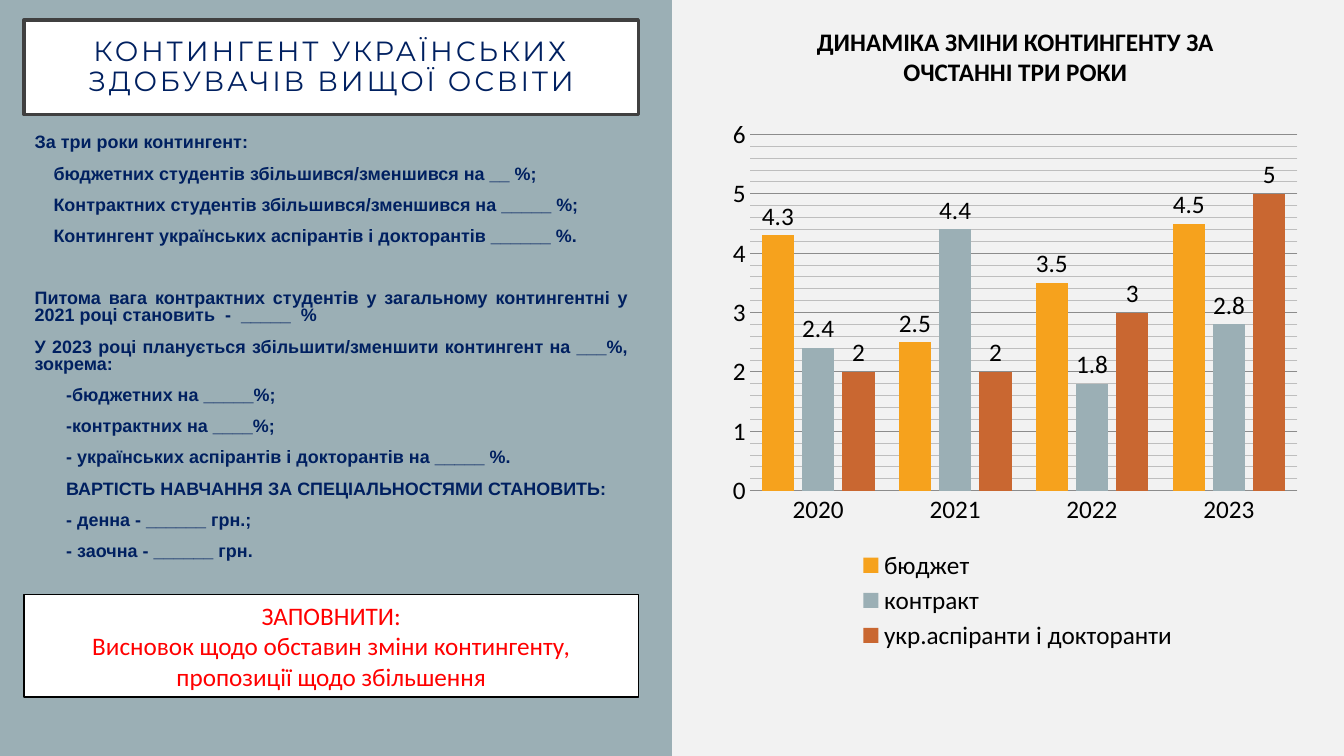
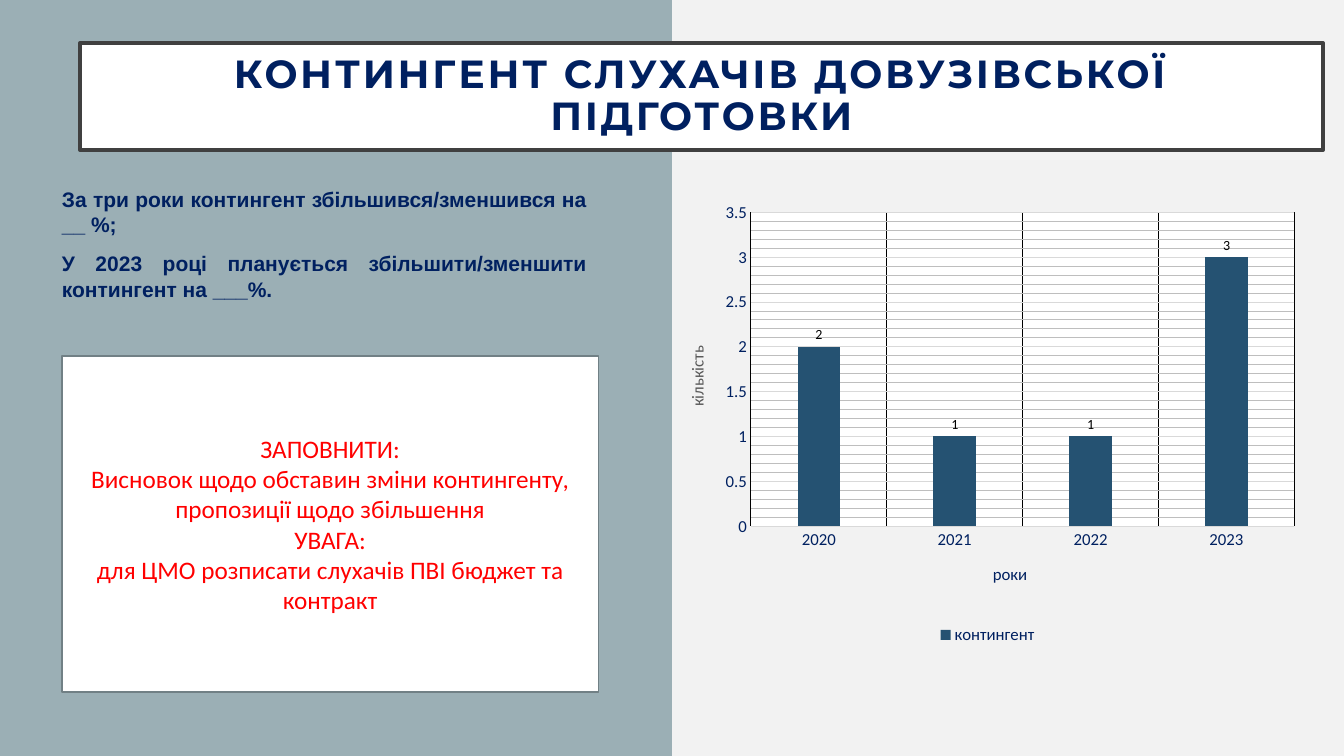
from copy import deepcopy

from lxml import etree
from pptx import Presentation
from pptx import util as u
from pptx.chart.data import CategoryChartData
from pptx.dml.color import RGBColor
from pptx.enum import chart as ch
from pptx.enum import shapes, text
from pptx.oxml import ns

PX = 9525  # EMU in one px, 96 px to the inch
WIDTH, HEIGHT = 1280, 720

NAVY = RGBColor(0x00, 0x20, 0x60)
RED = RGBColor(0xFF, 0x00, 0x00)
BLACK = RGBColor(0x00, 0x00, 0x00)
WHITE = RGBColor(0xFF, 0xFF, 0xFF)
PAPER = RGBColor(0xF2, 0xF2, 0xF2)
SLATE = RGBColor(0x9B, 0xAF, 0xB5)
FRAME = RGBColor(0x40, 0x40, 0x40)
CARD_EDGE = RGBColor(0x71, 0x80, 0x85)
CAPTION = RGBColor(0x59, 0x59, 0x59)
MAJOR_GRID = RGBColor(0x8C, 0x8C, 0x8C)
MINOR_GRID = RGBColor(0xBE, 0xBE, 0xBE)
PALE_GRID = RGBColor(0xD9, 0xD9, 0xD9)
AMBER = RGBColor(0xF6, 0xA2, 0x1D)
RUST = RGBColor(0xC9, 0x67, 0x31)
TEAL = RGBColor(0x25, 0x52, 0x72)


def add_text(slide, box, paragraphs, font, size, color, bold=False, edge=None,
             align=text.PP_ALIGN.CENTER, leading=1.0, gap=0, tracking=0, inset=10):
    """Text box, or a white framed card if edge is (colour, points).

    A paragraph is (text, left indent in px, extra points before it).
    """
    place = [v * PX for v in box]
    if edge:
        shape = slide.shapes.add_shape(shapes.MSO_SHAPE.RECTANGLE, *place)
        shape.shadow.inherit = False
        shape.fill.solid()
        shape.fill.fore_color.rgb = WHITE
        shape.line.color.rgb, shape.line.width = edge[0], u.Pt(edge[1])
    else:
        shape = slide.shapes.add_textbox(*place)
    frame = shape.text_frame
    frame.word_wrap = True
    frame.margin_left = frame.margin_right = inset * PX
    frame.vertical_anchor = text.MSO_ANCHOR.MIDDLE if edge else text.MSO_ANCHOR.TOP
    for i, (words, indent, extra) in enumerate(paragraphs):
        p = frame.paragraphs[0] if i == 0 else frame.add_paragraph()
        p.alignment, p.line_spacing = align, leading
        p.space_before = u.Pt(gap + extra)
        if indent:
            p._p.get_or_add_pPr().set("marL", str(indent * PX))
        run = p.add_run()
        run.text = words
        run.font.name, run.font.size, run.font.bold = font, u.Pt(size), bold
        run.font.color.rgb = color
        if tracking:
            run._r.get_or_add_rPr().set("spc", str(tracking * 100))


def add_columns(slide, box, series, size, axis_size, axis_color, top, step,
                minor_step, grid, base_line, gap, overlap, plot_box, legend_box=None):
    """Clustered columns; series holds (name, values, colour)."""
    data = CategoryChartData()
    data.categories = ["2020", "2021", "2022", "2023"]
    for name, values, _ in series:
        data.add_series(name, values)
    chart = slide.shapes.add_chart(ch.XL_CHART_TYPE.COLUMN_CLUSTERED,
                                   *[v * PX for v in box], data).chart
    chart.has_title = False
    chart.font.name, chart.font.size = "Calibri", u.Pt(size)
    chart.font.color.rgb = BLACK

    # Columns and their labels
    plot = chart.plots[0]
    plot.gap_width, plot.overlap, plot.vary_by_categories = gap, overlap, False
    plot.has_data_labels = True
    plot.data_labels.show_value = True
    plot.data_labels.position = ch.XL_LABEL_POSITION.OUTSIDE_END
    for column, (_, _, color) in zip(plot.series, series):
        column.format.fill.solid()
        column.format.fill.fore_color.rgb = color

    # Axes and grid
    for axis in (chart.category_axis, chart.value_axis):
        axis.major_tick_mark = axis.minor_tick_mark = ch.XL_TICK_MARK.NONE
        axis.tick_labels.font.size = u.Pt(axis_size)
        axis.tick_labels.font.color.rgb = axis_color
    chart.category_axis.format.line.color.rgb = base_line
    values_axis = chart.value_axis
    values_axis.format.line.fill.background()
    values_axis.minimum_scale, values_axis.maximum_scale = 0, top
    values_axis.major_unit, values_axis.minor_unit = step, minor_step
    values_axis.has_major_gridlines = values_axis.has_minor_gridlines = True
    grid_line = values_axis.major_gridlines.format.line
    grid_line.color.rgb, grid_line.width = grid, u.Pt(0.75)

    # Minor grid takes the style of the major one in its own colour
    axis_xml = values_axis._element
    minor_look = deepcopy(axis_xml.find(ns.qn("c:majorGridlines")).find(ns.qn("c:spPr")))
    for color in minor_look.iter(ns.qn("a:srgbClr")):
        color.set("val", str(MINOR_GRID))
    axis_xml.find(ns.qn("c:minorGridlines")).append(minor_look)

    # Legend, then places inside the chart as fractions of its size
    chart.has_legend = True
    chart.legend.position = ch.XL_LEGEND_POSITION.BOTTOM
    chart.legend.include_in_layout = False
    chart.legend.font.size = u.Pt(axis_size)
    chart.legend.font.color.rgb = axis_color
    plot_area = chart._chartSpace.chart.plotArea
    for part, index, fractions in ((plot_area, 0, plot_box),
                                   (chart.legend._element, 1, legend_box)):
        if not fractions:
            continue
        for old in part.findall(ns.qn("c:layout")):
            part.remove(old)
        layout = etree.Element(ns.qn("c:layout"))
        manual = etree.SubElement(layout, ns.qn("c:manualLayout"))
        settings = [("xMode", "edge"), ("yMode", "edge"), *zip("xywh", fractions)]
        if part is plot_area:
            settings.insert(0, ("layoutTarget", "inner"))
        for tag, value in settings:
            etree.SubElement(manual, ns.qn("c:" + tag)).set("val", str(value))
        part.insert(index, layout)
    return chart


# Shared styles
TITLE = dict(font="Montserrat", color=NAVY, edge=(FRAME, 2.5), leading=0.9,
             tracking=2, inset=19)
BODY = dict(font="Arial", color=NAVY, bold=True, align=text.PP_ALIGN.JUSTIFY, gap=10)
TASK = dict(font="Calibri", size=18, color=RED)
TASK_LINES = [("ЗАПОВНИТИ:", 0, 0),
              ("Висновок щодо обставин зміни контингенту, пропозиції щодо збільшення", 0, 0)]

# Slides with the slate left half
prs = Presentation()
prs.slide_width, prs.slide_height = WIDTH * PX, HEIGHT * PX
prs.slide_master.background.fill.solid()
prs.slide_master.background.fill.fore_color.rgb = PAPER
students, trainees = [prs.slides.add_slide(prs.slide_layouts[6]) for _ in range(2)]
for slide in (students, trainees):
    half = slide.shapes.add_shape(shapes.MSO_SHAPE.RECTANGLE, 0, 0,
                                  WIDTH // 2 * PX, HEIGHT * PX)
    half.shadow.inherit = False
    half.fill.solid()
    half.fill.fore_color.rgb = SLATE
    half.line.fill.background()

# Slide 1: students
add_text(students, (23, 19, 585, 90),
         [("КОНТИНГЕНТ УКРАЇНСЬКИХ ЗДОБУВАЧІВ ВИЩОЇ ОСВІТИ", 0, 0)], size=19.8, **TITLE)
add_text(students, (23, 124, 585, 431), [
    ("За три роки контингент:", 0, 0),
    ("бюджетних студентів збільшився/зменшився на __ %;", 18, 0),
    ("Контрактних студентів збільшився/зменшився на _____ %;", 18, 0),
    ("Контингент українських аспірантів і докторантів ______ %.", 18, 0),
    ("Питома вага контрактних студентів у загальному контингентні "
     "у 2021 році становить  -  _____  %", 0, 22),
    ("У 2023 році планується збільшити/зменшити контингент на ___%, зокрема:", 0, 0),
    ("-бюджетних на _____%;", 30, 0),
    ("-контрактних на ____%;", 30, 0),
    ("- українських аспірантів і докторантів на _____ %.", 30, 0),
    ("ВАРТІСТЬ НАВЧАННЯ ЗА СПЕЦІАЛЬНОСТЯМИ СТАНОВИТЬ:", 30, 0),
    ("- денна - ______ грн.;", 30, 0),
    ("- заочна - ______ грн.", 30, 0),
], size=12.8, leading=0.8, **BODY)
add_text(students, (23, 566, 585, 98), TASK_LINES, edge=(BLACK, 1), **TASK)
add_columns(students, (686, 102, 561, 522), [
    ("бюджет", (4.3, 2.5, 3.5, 4.5), AMBER),
    ("контракт", (2.4, 4.4, 1.8, 2.8), SLATE),
    ("укр.аспіранти і докторанти", (2, 2, 3, 5), RUST),
], size=18, axis_size=18, axis_color=BLACK, top=6, step=1, minor_step=0.2,
    grid=MAJOR_GRID, base_line=MAJOR_GRID, gap=75, overlap=-25,
    plot_box=(0.05, 0.05, 0.93, 0.65), legend_box=(0.23, 0.8, 0.55, 0.2))
add_text(students, (717, 20, 500, 68),
         [("ДИНАМІКА ЗМІНИ КОНТИНГЕНТУ ЗА ОЧСТАННІ ТРИ РОКИ", 0, 0)],
         font="Calibri", size=18, color=BLACK, bold=True)

# Slide 2: trainees of the preparatory courses
add_text(trainees, (76, 41, 1184, 102),
         [("КОНТИНГЕНТ СЛУХАЧІВ ДОВУЗІВСЬКОЇ ПІДГОТОВКИ", 0, 0)],
         size=28, bold=True, **TITLE)
intake = add_columns(trainees, (636, 151, 609, 467),
                     [("контингент", (2, 1, 1, 3), TEAL)],
                     size=10, axis_size=12, axis_color=NAVY, top=3.5, step=0.5,
                     minor_step=0.1, grid=PALE_GRID, base_line=PALE_GRID, gap=219,
                     overlap=0, plot_box=(0.13, 0.11, 0.85, 0.64))
for axis, caption, color in ((intake.category_axis, "роки", NAVY),
                             (intake.value_axis, "кількість", CAPTION)):
    run = axis.axis_title.text_frame.paragraphs[0].add_run()
    run.text = caption
    run.font.size, run.font.bold, run.font.color.rgb = u.Pt(12), False, color
intake.category_axis.has_major_gridlines = True
year_lines = intake.category_axis.major_gridlines.format.line
year_lines.color.rgb, year_lines.width = BLACK, u.Pt(0.75)

# White plot background
plot_area = intake._chartSpace.chart.plotArea
look = etree.SubElement(plot_area, ns.qn("c:spPr"))
paint = etree.SubElement(look, ns.qn("a:solidFill"))
etree.SubElement(paint, ns.qn("a:srgbClr")).set("val", str(WHITE))

add_text(trainees, (49, 173, 520, 348), [
    ("За три роки контингент збільшився/зменшився на __ %;", 0, 0),
    ("У 2023 році планується збільшити/зменшити контингент на ___%.", 0, 0),
], size=15, **BODY)
add_text(trainees, (59, 339, 511, 320), TASK_LINES + [
    ("УВАГА:", 0, 0),
    ("для ЦМО розписати слухачів ПВІ бюджет та контракт", 0, 0),
], edge=(CARD_EDGE, 1), **TASK)

prs.save("out.pptx")
